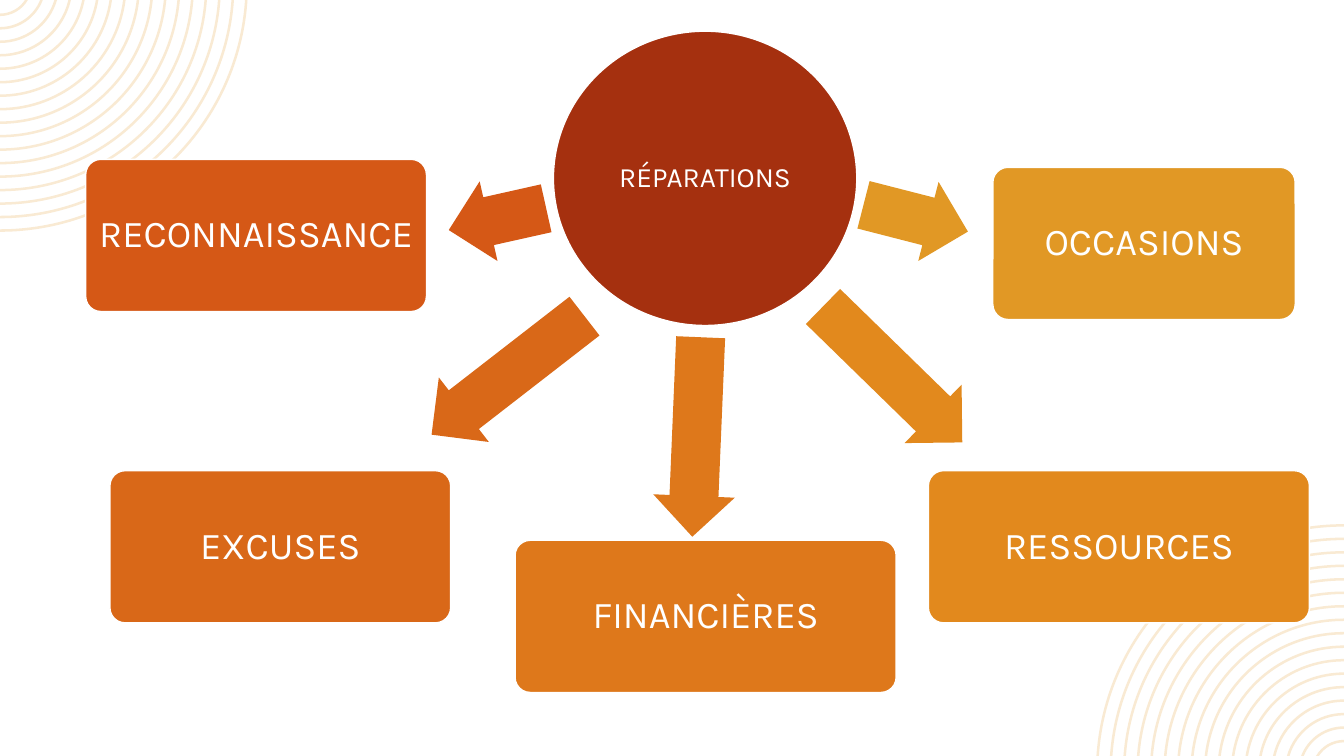
from math import asin, cos, pi, sin, tan

from pptx import Presentation
from pptx.dml.color import RGBColor
from pptx.enum.shapes import MSO_SHAPE as SHAPE
from pptx.enum.text import MSO_ANCHOR as ANCHOR, PP_ALIGN as ALIGN
from pptx.oxml.ns import qn
from pptx.util import Pt

WIDE, HIGH = 960, 540
BOX_H, ARROW_H = 108.7, 58.3
HUES = {
    "white": "FFFFFF", "ring": "F9EAD3", "hub": "A5300F",
    "rust": "D55816", "burnt": "D96818", "orange": "DE781B",
    "amber": "E2891D", "gold": "E19825",
}

# label, hue, box (left, top, width), arrow (left, top, width, turn)
ITEMS = [
    ("RECONNAISSANCE", "rust", (61.2, 113.8, 243.4), (319.7, 127.4, 71.3, 347.4)),
    ("EXCUSES", "burnt", (78.5, 336.2, 243.4), (293.8, 239, 138.2, 322.2)),
    ("FINANCIÈRES", "orange", (367.9, 385.9, 272.2), (426.2, 283, 142.6, 272.4)),
    ("RESSOURCES", "amber", (663.1, 336.2, 272.2), (568.1, 238.3, 139, 224.3)),
    ("OCCASIONS", "gold", (709.2, 119.5, 216), (615.6, 126.7, 77, 194.4)),
]

# Rings share a centre just outside the slide corner
RINGS, RADIUS, STEP, THICK, DROP = 17, 177.2, 9.63, 1.8, 11.6


def color(hue):
    return RGBColor.from_string(HUES[hue])


def paint(shape, hue, edge=None):
    shape.shadow.inherit = False
    shape.fill.solid()
    shape.fill.fore_color.rgb = color(hue)
    if edge:
        shape.line.color.rgb = color(edge)
        shape.line.width = Pt(1)
    else:
        shape.line.fill.background()


def arc(radius):
    """Four curve points of a ring edge, from the slide's top to its left."""
    start = asin(DROP / radius)
    pull = radius * 4 / 3 * tan((pi / 2 - start) / 4)
    x, y = radius * cos(start), 0
    low = radius - DROP
    return [(x, y), (x - pull * sin(start), y + pull * cos(start)),
            (pull, low), (0, low)]


def bend(shape):
    """Turn both edges of each ring from three lines into one curve."""
    lines = list(shape._element.iter(qn("a:lnTo")))
    for ring in range(0, len(lines), 7):
        for edge in (ring, ring + 4):
            curve = lines[edge]
            for line in lines[edge + 1:edge + 3]:
                curve.append(line[0])
                line.getparent().remove(line)
            curve.tag = qn("a:cubicBezTo")


def add_rings(slide, flip):
    """Draw the corner rings; flip moves them to the bottom right."""
    pen = None
    for i in range(RINGS):
        outer = RADIUS - i * STEP
        spots = arc(outer) + arc(outer - THICK)[::-1]
        if flip:
            spots = [(WIDE - x, HIGH - y) for x, y in spots]
        first, *rest = [(Pt(x), Pt(y)) for x, y in spots]
        if pen:
            pen.move_to(*first)
        else:
            pen = slide.shapes.build_freeform(*first)
        pen.add_line_segments(rest, close=True)
    rings = pen.convert_to_shape()
    bend(rings)
    paint(rings, "ring")


def add_node(slide, kind, area, hue, label, size, inset):
    node = slide.shapes.add_shape(kind, *map(Pt, area))
    paint(node, hue, "white")
    frame = node.text_frame
    sides = ("left", "top", "right", "bottom")
    look = {f"margin_{side}": Pt(inset) for side in sides}
    look.update(word_wrap=True, vertical_anchor=ANCHOR.MIDDLE)
    for name, value in look.items():
        setattr(frame, name, value)
    para = frame.paragraphs[0]
    para.text = label
    para.alignment = ALIGN.CENTER
    para.line_spacing = 0.9
    font = para.runs[0].font
    for name, value in {"name": "Karla", "size": Pt(size)}.items():
        setattr(font, name, value)
    font.color.rgb = color("white")
    return node


def add_arrow(slide, left, top, width, turn, hue):
    area = map(Pt, (left, top, width, ARROW_H))
    arrow = slide.shapes.add_shape(SHAPE.LEFT_ARROW, *area)
    arrow.adjustments[0] = 0.6
    arrow.adjustments[1] = 0.5
    arrow.rotation = turn
    paint(arrow, hue)


def main():
    deck = Presentation()
    deck.slide_width, deck.slide_height = Pt(WIDE), Pt(HIGH)
    slide = deck.slides.add_slide(deck.slide_layouts[6])
    for flip in (False, True):
        add_rings(slide, flip)
    add_node(slide, SHAPE.OVAL, (395.3, 22.3, 216.7, 210.2), "hub",
             "RÉPARATIONS", 20, 1)
    for label, hue, box, arrow in ITEMS:
        add_arrow(slide, *arrow, hue)
        node = add_node(slide, SHAPE.ROUNDED_RECTANGLE, (*box, BOX_H), hue,
                        label, 27, 4.3)
        node.adjustments[0] = 0.1
    deck.save("out.pptx")


if __name__ == "__main__":
    main()
